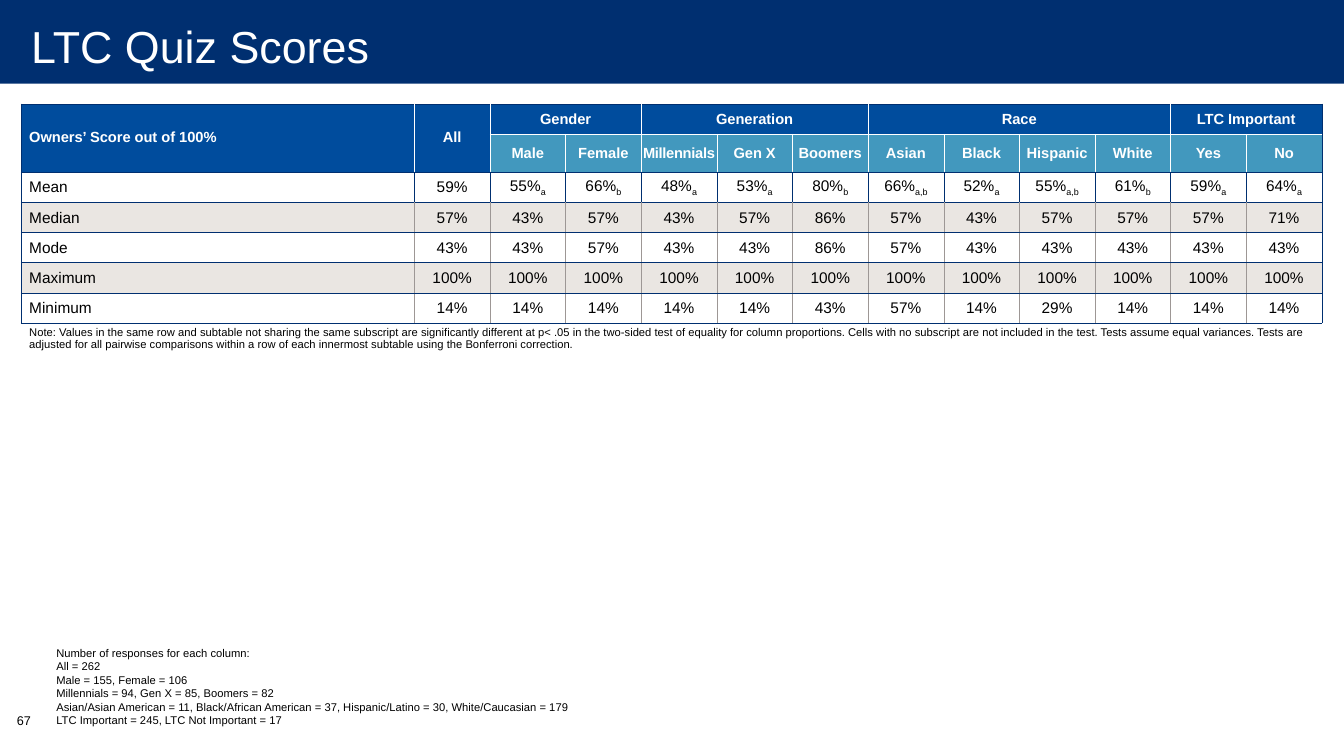
import pptx
import pptx.dml.color
import pptx.enum.shapes
import pptx.enum.text
import pptx.oxml.ns
import pptx.util
from lxml import etree

Inches = pptx.util.Inches
Pt = pptx.util.Pt
RGB = pptx.dml.color.RGBColor
ALIGN = pptx.enum.text.PP_ALIGN
ANCHOR = pptx.enum.text.MSO_ANCHOR

NAVY = RGB(0x00, 0x2F, 0x70)
BLUE = RGB(0x00, 0x4C, 0x9D)
TEAL = RGB(0x42, 0x98, 0xBE)
SAND = RGB(0xEA, 0xE6, 0xE2)
GRAY = RGB(0x9D, 0x97, 0x95)
WHITE = RGB(0xFF, 0xFF, 0xFF)
BLACK = RGB(0x00, 0x00, 0x00)

TITLE = "LTC Quiz Scores"
PAGE = "67"
COUNTS = [
    "Number of responses for each column:",
    "All = 262",
    "Male = 155, Female = 106",
    "Millennials = 94, Gen X = 85, Boomers = 82",
    "Asian/Asian American = 11, Black/African American = 37, Hispanic/Latino = 30, White/Caucasian = 179",
    "LTC Important = 245, LTC Not Important = 17",
]
LEADS = ["Owners’ Score out of 100%", "All"]
GROUPS = [
    ("Gender", ["Male", "Female"]),
    ("Generation", ["Millennials", "Gen X", "Boomers"]),
    ("Race", ["Asian", "Black", "Hispanic", "White"]),
    ("LTC Important", ["Yes", "No"]),
]
SCORES = [
    ("Mean", [59, 55, 66, 48, 53, 80, 66, 52, 55, 61, 59, 64]),
    ("Median", [57, 43, 57, 43, 57, 86, 57, 43, 57, 57, 57, 71]),
    ("Mode", [43, 43, 57, 43, 43, 86, 57, 43, 43, 43, 43, 43]),
    ("Maximum", [100] * 12),
    ("Minimum", [14, 14, 14, 14, 14, 43, 57, 14, 29, 14, 14, 14]),
]
MARKS = ["", "a", "b", "a", "a", "b", "a,b", "a", "a,b", "b", "a", "a"]
NOTE = (
    "Note: Values in the same row and subtable not sharing the same subscript are "
    "significantly different at p< .05 in the two-sided test of equality for column "
    "proportions. Cells with no subscript are not included in the test. Tests assume "
    "equal variances. Tests are adjusted for all pairwise comparisons within a row of "
    "each innermost subtable using the Bonferroni correction."
)

ROWS, COLS = 8, 13
HEAD = {"name": "Arial", "size": Pt(10.5), "bold": True}
BODY = {"name": "Arial", "size": Pt(11), "bold": False}
SMALL = {"name": "Arial", "size": Pt(8), "bold": False}
LARGE = {"name": "Arial", "size": Pt(32)}
FOLIO = {"name": "Arial", "size": Pt(9)}
SIDES = ("left", "top", "right", "bottom")


def apply(item, values):
    for key, value in values.items():
        setattr(item, key, value)


def pad(item, sizes):
    apply(item, {"margin_" + side: Inches(size) for side, size in zip(SIDES, sizes)})


def write(para, text, form, color):
    run = para.add_run()
    run.text = text
    apply(run.font, form)
    run.font.color.rgb = color
    return run


def add_text(slide, area, lines, form, color, anchor, insets):
    frame = slide.shapes.add_textbox(*map(Inches, area)).text_frame
    apply(frame, {"word_wrap": True, "vertical_anchor": anchor})
    pad(frame, insets)
    for n, line in enumerate(lines):
        para = frame.add_paragraph() if n else frame.paragraphs[0]
        write(para, line, form, color)


def draw_edge(cell, side, color):
    props = cell._tc.get_or_add_tcPr()
    line = etree.SubElement(props, pptx.oxml.ns.qn("a:ln" + side), w=str(Pt(0.25)))
    if color is None:
        etree.SubElement(line, pptx.oxml.ns.qn("a:noFill"))
    else:
        solid = etree.SubElement(line, pptx.oxml.ns.qn("a:solidFill"))
        etree.SubElement(solid, pptx.oxml.ns.qn("a:srgbClr"), val=str(color))


def find_edges(cell, row, col):
    if row == ROWS - 1:
        return {"L": None, "R": None, "T": NAVY, "B": None}
    side = WHITE if row < 2 else NAVY if row == 2 else GRAY
    return {
        "L": side if col else NAVY,
        "R": NAVY if col + cell.span_width == COLS else side,
        "T": WHITE if row == 1 else NAVY,
        "B": WHITE if row + cell.span_height == 1 else NAVY,
    }


def fill_cell(cell, row, col, text):
    head = row < 2
    form = HEAD if head else SMALL if row == ROWS - 1 else BODY
    cell.vertical_anchor = ANCHOR.MIDDLE
    if head:
        pad(cell, (0, 0, 0, 0) if col else (0.08, 0.1, 0.05, 0.1))
    else:
        pad(cell, (0.01 if col else 0.08, 0.01, 0.01, 0))
    para = cell.text_frame.paragraphs[0]
    para.alignment = ALIGN.CENTER if col else ALIGN.LEFT
    run = write(para, text, form, WHITE if head else BLACK)
    if text == "Millennials":
        run.font._element.set("spc", "-20")
    if row == 2 and col and MARKS[col - 1]:
        mark = write(para, MARKS[col - 1], form, BLACK)
        mark.font._element.set("baseline", "-25000")
    for side, color in find_edges(cell, row, col).items():
        draw_edge(cell, side, color)
    if head or row in (3, 5):
        cell.fill.solid()
        cell.fill.fore_color.rgb = SAND if not head else TEAL if row else BLUE
    else:
        cell.fill.background()


def add_scores(slide):
    area = map(Inches, (0.21, 1.03, 12.9, 2.4))
    table = slide.shapes.add_table(ROWS, COLS, *area).table
    apply(table, {"first_row": False, "horz_banding": False})
    for n, col in enumerate(table.columns):
        col.width = Inches(0.75 if n else 3.9)
    for row in table.rows:
        row.height = Inches(0.3)

    texts = {(0, n): lead for n, lead in enumerate(LEADS)}
    for n in range(len(LEADS)):
        table.cell(0, n).merge(table.cell(1, n))
    start = len(LEADS)
    for group, names in GROUPS:
        texts[0, start] = group
        table.cell(0, start).merge(table.cell(0, start + len(names) - 1))
        for n, name in enumerate(names, start):
            texts[1, n] = name
        start += len(names)
    for row, (label, values) in enumerate(SCORES, 2):
        texts[row, 0] = label
        for col, value in enumerate(values, 1):
            texts[row, col] = f"{value}%"
    texts[ROWS - 1, 0] = NOTE
    table.cell(ROWS - 1, 0).merge(table.cell(ROWS - 1, COLS - 1))

    for row in range(ROWS):
        for col in range(COLS):
            cell = table.cell(row, col)
            if cell.is_spanned:
                pad(cell, (0, 0, 0, 0))
            else:
                fill_cell(cell, row, col, texts[row, col])


def main():
    deck = pptx.Presentation()
    apply(deck, {"slide_width": Inches(13.33), "slide_height": Inches(7.5)})
    slide = deck.slides.add_slide(deck.slide_layouts[6])
    band = slide.shapes.add_shape(
        pptx.enum.shapes.MSO_SHAPE.RECTANGLE, *map(Inches, (0, -0.03, 13.33, 0.86))
    )
    band.shadow.inherit = False
    band.fill.solid()
    band.fill.fore_color.rgb = NAVY
    band.line.fill.background()
    inset = (0.1, 0.05, 0.1, 0.05)
    add_text(slide, (0.01, -0.03, 13.33, 0.97), [TITLE], LARGE, WHITE,
             ANCHOR.MIDDLE, (0.3, 0, 0.2, 0))
    add_text(slide, (0.46, 6.35, 5.85, 0.91), COUNTS, SMALL, BLACK, ANCHOR.BOTTOM, inset)
    add_scores(slide)
    add_text(slide, (0.07, 7.02, 0.49, 0.4), [PAGE], FOLIO, BLACK, ANCHOR.TOP, inset)
    deck.save("out.pptx")


if __name__ == "__main__":
    main()
